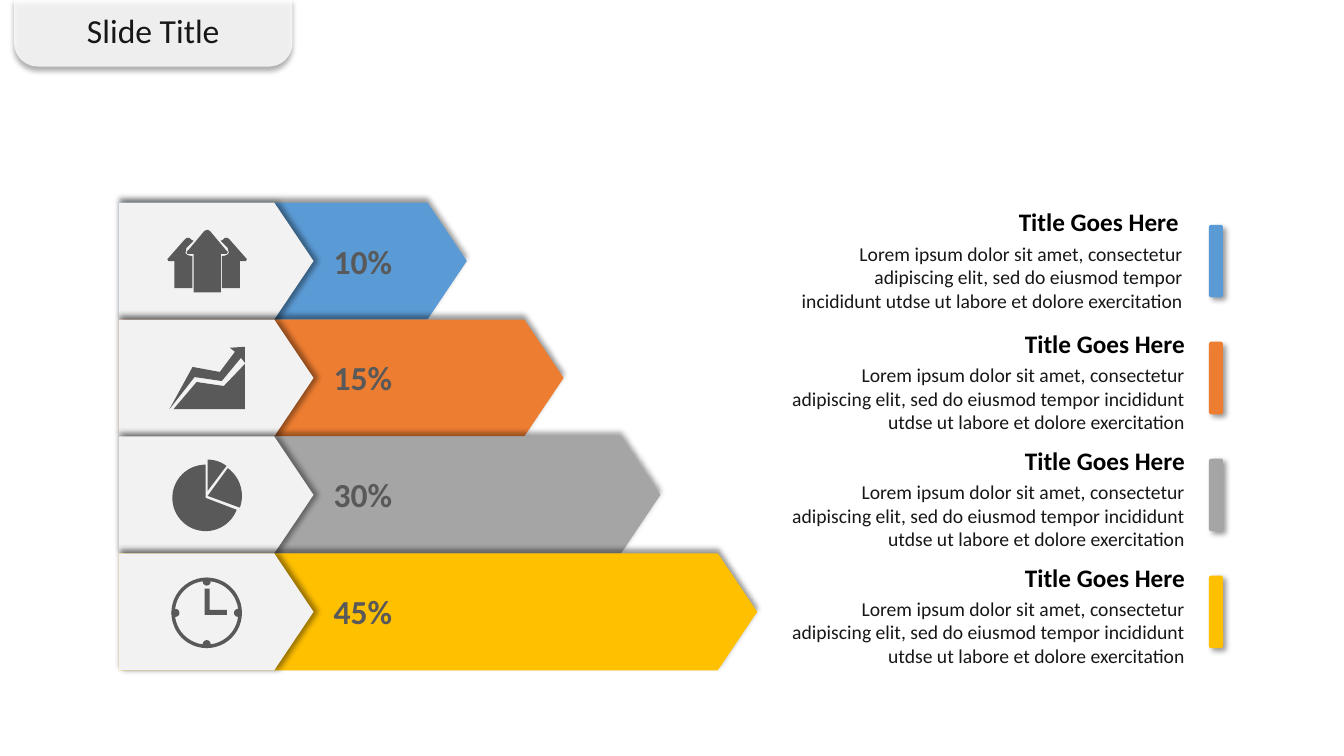
"""Builds a slide of four stepped percentage arrows with matching descriptions."""
import math

import pptx
import pptx.dml.color
import pptx.enum.shapes
import pptx.enum.text
import pptx.oxml.ns
import pptx.util
from lxml import etree

Inches = pptx.util.Inches
MSO = pptx.enum.shapes.MSO_SHAPE
ALIGN = pptx.enum.text.PP_ALIGN
qn = pptx.oxml.ns.qn

FONT = "Calibri"
INK, ICON, TAB, BLACK = "181717", "595959", "F2F2F2", "000000"
TITLE = "Slide Title"
HEADING = "Title Goes Here"
BODY = ("Lorem ipsum dolor sit amet, consectetur adipiscing elit, sed do eiusmod "
        "tempor incididunt utdse ut labore et dolore exercitation")
ROWS = [("10%", "5B9BD5"), ("15%", "ED7D31"), ("30%", "A5A5A5"), ("45%", "FFC000")]

LEFT, TOP, ROW_H = 1.18, 2.01, 1.16
TAB_W, BAND_W, BAND_STEP, TIP = 1.93, 3.45, 0.96, 0.39

ARROWS_AXIS = 4.11
SIDE_ARROW = [(1.91, 2.86), (1.91, 2.54), (1.89, 2.54), (1.86, 2.53), (1.84, 2.51),
              (1.85, 2.46), (1.92, 2.39), (1.9, 2.38), (1.88, 2.36), (1.85, 2.36),
              (1.83, 2.38), (1.68, 2.55), (1.66, 2.57), (1.67, 2.59), (1.69, 2.59),
              (1.73, 2.59), (1.73, 2.86)]
MID_ARROW_HALF = [(2.06, 2.28), (2.08, 2.29), (2.09, 2.3), (2.24, 2.48), (2.26, 2.5),
                  (2.25, 2.52), (2.23, 2.52), (2.19, 2.52), (2.19, 2.9)]
GROWTH_AREA = [(1.72, 4.06), (1.95, 3.79), (2.22, 3.83), (2.43, 3.61), (2.43, 4.06)]
GROWTH_ARROW = [(2.43, 3.6), (2.43, 3.44), (2.28, 3.45), (2.33, 3.49), (2.18, 3.69),
                (1.91, 3.64), (1.68, 4.06), (1.93, 3.74), (2.2, 3.78), (2.39, 3.55)]
PIE_SLICES = [(2.04, 4.94, 0.33, 21, 270), (2.06, 4.92, 0.34, -54, 20),
              (2.06, 4.87, 0.31, -90, -53)]
CLOCK_X, CLOCK_Y, CLOCK_R, DOT_R, DOT_AT = 2.05, 6.08, 0.35, 0.04, 0.31
CLOCK_HANDS = [(2.08, 6.05), (2.08, 5.84), (2.03, 5.84), (2.03, 6.1), (2.25, 6.1),
               (2.25, 6.05)]

prs = pptx.Presentation()
prs.slide_width, prs.slide_height = Inches(13.33), Inches(7.5)
shapes = prs.slides.add_slide(prs.slide_layouts[6]).shapes


def rgb(color):
    return pptx.dml.color.RGBColor.from_string(color)


def set_alpha(color_el, percent):
    etree.SubElement(color_el, qn("a:alpha"), val=str(percent * 1000))


def paint(sp, color, shadow_dir=None):
    sp.fill.solid()
    sp.fill.fore_color.rgb = rgb(color)
    sp.line.fill.background()
    sp.shadow.inherit = False
    if shadow_dir is not None:
        effects = sp._element.spPr.find(qn("a:effectLst"))
        shadow = etree.SubElement(
            effects, qn("a:outerShdw"), blurRad=str(pptx.util.Pt(4)),
            dist=str(pptx.util.Pt(3)), dir=str(shadow_dir * 60000), rotWithShape="0")
        set_alpha(etree.SubElement(shadow, qn("a:srgbClr"), val=BLACK), 40)
    return sp


def preset(kind, x, y, w, h, color, shadow_dir=None, adj=None):
    sp = shapes.add_shape(kind, Inches(x), Inches(y), Inches(w), Inches(h))
    if adj is not None:
        sp.adjustments[0] = adj
    return paint(sp, color, shadow_dir)


def outline(points):
    pts = [(Inches(x), Inches(y)) for x, y in points]
    builder = shapes.build_freeform(*pts[0])
    builder.add_line_segments(pts[1:], close=True)
    paint(builder.convert_to_shape(), ICON)


def mirror(points):
    return [(ARROWS_AXIS - x, y) for x, y in points]


def sector(cx, cy, r, start, end, steps=40):
    angles = [math.radians(start + (end - start) * i / steps) for i in range(steps + 1)]
    return [(cx, cy)] + [(cx + r * math.cos(a), cy + r * math.sin(a)) for a in angles]


def text(x, y, w, h, paras, align, wrap=True, middle=False):
    tf = shapes.add_textbox(Inches(x), Inches(y), Inches(w), Inches(h)).text_frame
    tf.word_wrap = wrap
    if middle:
        tf.vertical_anchor = pptx.enum.text.MSO_ANCHOR.MIDDLE
    for i, (words, size, color, bold) in enumerate(paras):
        p = tf.paragraphs[0] if i == 0 else tf.add_paragraph()
        if i:
            p.space_before = pptx.util.Pt(3)
        p.text, p.alignment = words, align
        p.font.name, p.font.size, p.font.bold = FONT, pptx.util.Pt(size), bold
        p.font.color.rgb = rgb(color)


def circle(cx, cy, r, kind=MSO.OVAL, adj=None):
    preset(kind, cx - r, cy - r, 2 * r, 2 * r, ICON, adj=adj)


def main():
    heading, body = (HEADING, 18, BLACK, True), (BODY, 14, INK, False)

    for i, (_, color) in enumerate(ROWS):
        y = TOP + i * ROW_H
        preset(MSO.PENTAGON, LEFT, y, BAND_W + i * BAND_STEP, ROW_H, color, 270,
               TIP / ROW_H)
        preset(MSO.PENTAGON, LEFT, y, TAB_W, ROW_H, TAB, 0, TIP / ROW_H)

    mid_arrow = MID_ARROW_HALF + mirror(MID_ARROW_HALF)[::-1]
    slices = [sector(*s) for s in PIE_SLICES]
    for points in [mirror(SIDE_ARROW), SIDE_ARROW, mid_arrow, GROWTH_AREA,
                   GROWTH_ARROW, *slices, CLOCK_HANDS]:
        outline(points)
    circle(CLOCK_X, CLOCK_Y, CLOCK_R, MSO.DONUT, 0.05)
    for dx, dy in [(0, -1), (1, 0), (0, 1), (-1, 0)]:
        circle(CLOCK_X + dx * DOT_AT, CLOCK_Y + dy * DOT_AT, DOT_R)

    for i, (percent, color) in enumerate(ROWS):
        y = TOP + i * ROW_H
        text(LEFT + TAB_W, y + 0.25, 0.98, 0.65, [(percent, 24, ICON, True)],
             ALIGN.CENTER, wrap=False, middle=True)
        preset(MSO.ROUNDED_RECTANGLE, 11.99, y + 0.22, 0.14, 0.72, color, 45)
        if i:
            text(7.74, y + 0.04, 4.11, ROW_H, [heading, body], ALIGN.RIGHT)
        else:
            text(7.83, 2.35, 4, 0.81, [body], ALIGN.RIGHT)
            text(9.99, 2, 1.8, 0.4, [heading], ALIGN.RIGHT, wrap=False)

    title_tab = preset(MSO.ROUND_2_SAME_RECTANGLE, 0.14, -0.01, 2.76, 0.67, "FFFFFF",
                       90, 0.35)
    title_tab.rotation = 180
    set_alpha(title_tab._element.spPr.find(qn("a:solidFill"))[0], 80)
    text(0.14, 0.05, 2.76, 0.5, [(TITLE, 24, INK, False)], ALIGN.CENTER)

    prs.save("out.pptx")


if __name__ == "__main__":
    main()
